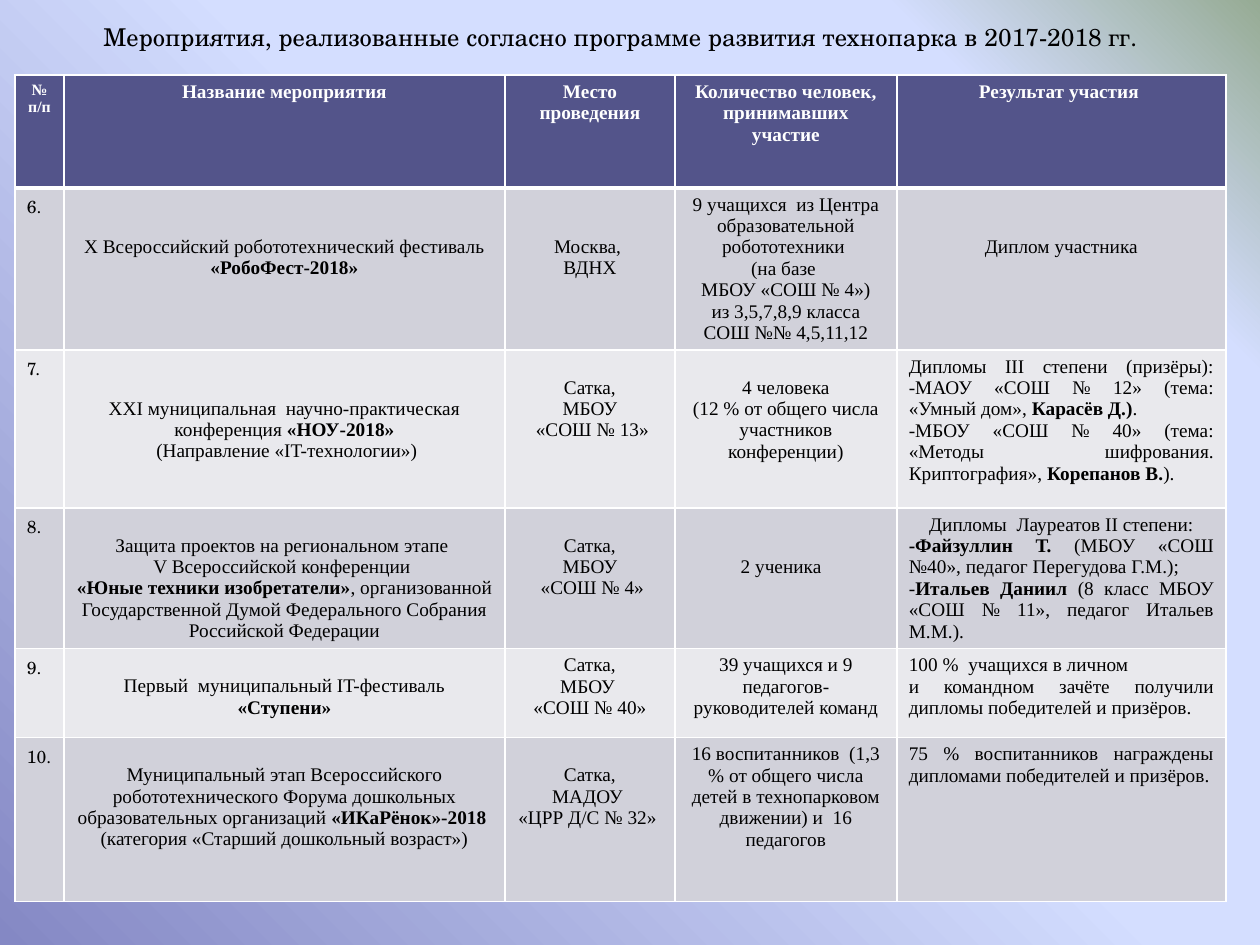
from dataclasses import dataclass

from pptx import Presentation
from pptx.dml.color import RGBColor
from pptx.enum.text import MSO_AUTO_SIZE, PP_ALIGN
from pptx.oxml import parse_xml
from pptx.oxml.ns import nsdecls
from pptx.util import Emu, Pt

CENTER, LEFT, JUSTIFY = PP_ALIGN.CENTER, PP_ALIGN.LEFT, PP_ALIGN.JUSTIFY
GROW = MSO_AUTO_SIZE.SHAPE_TO_FIT_TEXT
EMU_PER_PX = 914400 / 126
SERIF, SCHOOL = "Times New Roman", "TeX Gyre Schola"
BLACK, WHITE, HEADER_FILL = "000000", "FFFFFF", "53548A"
BAND_FILLS = ("D1D1DA", "E9E9ED")
LINE_HEIGHT, SIDE_MARGIN, TOP_MARGIN = 21, 12, 6
COLUMN_WIDTHS = (49, 441, 170, 222, 329)
ROW_HEIGHTS = (113, 125, 158, 113, 89, 164)
BACKGROUND_STOPS = ((0, "8488C4"), (53, "D4DEFF"), (83, "D4DEFF"), (100, "96AB94"))


@dataclass(frozen=True)
class Entry:
    text: str
    lines_down: int = 0
    aligns: tuple = (CENTER,)


@dataclass(frozen=True)
class Style:
    font: str
    size: int
    color: str = BLACK
    bold: bool = False


HEADINGS = ("№ п/п", "Название мероприятия", "Место проведения",
            "Количество человек, принимавших участие", "Результат участия ")

# fmt: off
EVENTS = (
    (Entry("X Всероссийский робототехнический фестиваль *«РобоФест-2018»*", 2),
     Entry("Москва, \nВДНХ", 2),
     Entry("9 учащихся  из Центра образовательной робототехники \n(на базе \n"
           "МБОУ «СОШ № 4»)\nиз 3,5,7,8,9 класса СОШ №№ 4,5,11,12"),
     Entry("Диплом участника", 2)),
    (Entry("XXI муниципальная  научно-практическая конференция *«НОУ-2018»*\n"
           " (Направление «IT-технологии»)", 2),
     Entry("Сатка,\nМБОУ\n «СОШ № 13»", 1),
     Entry("4 человека\n(12 % от общего числа участников конференции)", 1),
     Entry("Дипломы III степени (призёры): -МАОУ «СОШ № 12» (тема: «Умный дом», "
           "*Карасёв Д.)*.\n-МБОУ «СОШ № 40» (тема: «Методы шифрования. "
           "Криптография», *Корепанов В.*).", 0, (JUSTIFY,))),
    (Entry("Защита проектов на региональном этапе \nV Всероссийской конференции \n"
           "*«Юные техники изобретатели»*, организованной Государственной Думой "
           "Федерального Собрания Российской Федерации", 1),
     Entry("Сатка,\nМБОУ\n «СОШ № 4»", 1),
     Entry("2 ученика  ", 2),
     Entry("Дипломы  Лауреатов II степени:\n*-Файзуллин Т.* (МБОУ «СОШ №40», "
           "педагог Перегудова Г.М.);\n-*Итальев Даниил* (8 класс МБОУ "
           "«СОШ № 11», педагог Итальев М.М.).", 0, (CENTER, JUSTIFY))),
    (Entry("Первый  муниципальный IT-фестиваль *«Ступени»*", 1),
     Entry("Сатка,\nМБОУ \n«СОШ № 40»"),
     Entry("39 учащихся и 9 педагогов-руководителей команд"),
     Entry("100 %  учащихся в личном \nи командном зачёте получили дипломы "
           "победителей и призёров.", 0, (JUSTIFY,))),
    (Entry("Муниципальный этап Всероссийского робототехнического Форума дошкольных "
           "образовательных организаций *«ИКаРёнок»-2018  *"
           "(категория «Старший дошкольный возраст»)", 1),
     Entry("Сатка,\nМАДОУ \n«ЦРР Д/С № 32» ", 1),
     Entry("16 воспитанников  (1,3 % от общего числа детей в технопарковом "
           "движении) и  16 педагогов"),
     Entry("75 % воспитанников награждены дипломами победителей и призёров.",
           0, (JUSTIFY,))),
)
# fmt: on


def px(length: int) -> Emu:
    return Emu(round(length * EMU_PER_PX))


def rgb(color: str) -> RGBColor:
    return RGBColor.from_string(color)


def write(frame, entry: Entry, style: Style) -> None:
    for index, line in enumerate(entry.text.split("\n")):
        para = frame.add_paragraph() if index else frame.paragraphs[0]
        para.alignment = entry.aligns[min(index, len(entry.aligns) - 1)]
        for part, text in enumerate(line.split("*")):
            if not text:
                continue
            span = para.add_run()
            span.text = text
            span.font.name = style.font
            span.font.size = Pt(style.size)
            span.font.bold = style.bold or part % 2 == 1
            span.font.color.rgb = rgb(style.color)


def set_borders(cell, top: int, bottom: int) -> None:
    properties = cell._tc.get_or_add_tcPr()
    widths = (("lnL", 1), ("lnR", 1), ("lnT", top), ("lnB", bottom))
    for index, (side, points) in enumerate(widths):
        properties.insert(index, parse_xml(
            f'<a:{side} {nsdecls("a")} w="{Pt(points)}"><a:solidFill>'
            f'<a:srgbClr val="{WHITE}"/></a:solidFill></a:{side}>'))


def fill_cell(cell, entry: Entry, style: Style, fill: str, row: int) -> None:
    cell.margin_left = cell.margin_right = px(SIDE_MARGIN)
    cell.margin_top = px(TOP_MARGIN + entry.lines_down * LINE_HEIGHT)
    cell.margin_bottom = px(TOP_MARGIN)
    cell.fill.solid()
    cell.fill.fore_color.rgb = rgb(fill)
    set_borders(cell, 3 if row == 1 else 1, 3 if row == 0 else 1)
    write(cell.text_frame, entry, style)


def paint_background(page) -> None:
    stops = "".join(f'<a:gs pos="{percent * 1000}"><a:srgbClr val="{color}"/></a:gs>'
                    for percent, color in BACKGROUND_STOPS)
    page.element.cSld.insert(0, parse_xml(
        f'<p:bg {nsdecls("p", "a")}><p:bgPr><a:gradFill rotWithShape="1">'
        f'<a:gsLst>{stops}</a:gsLst><a:path path="circle">'
        '<a:fillToRect l="0" t="100000" r="100000" b="0"/></a:path></a:gradFill>'
        '<a:effectLst/></p:bgPr></p:bg>'))


def add_events_table(page) -> None:
    table = page.shapes.add_table(
        len(ROW_HEIGHTS), len(COLUMN_WIDTHS), px(15), px(75),
        px(sum(COLUMN_WIDTHS)), px(849)).table
    table.first_row = table.horz_banding = False
    for column, width in zip(table.columns, COLUMN_WIDTHS):
        column.width = px(width)
    for row, height in zip(table.rows, ROW_HEIGHTS):
        row.height = px(height)
    for column, heading in enumerate(HEADINGS):
        style = Style(SERIF, 11 if column else 9, WHITE, True)
        fill_cell(table.cell(0, column), Entry(heading), style, HEADER_FILL, 0)
    for row, event in enumerate(EVENTS, 1):
        fill = BAND_FILLS[(row - 1) % 2]
        number = Entry(f"{row + 5}.", 0, (LEFT,))
        fill_cell(table.cell(row, 0), number, Style(SCHOOL, 10), fill, row)
        for column, entry in enumerate(event, 1):
            fill_cell(table.cell(row, column), entry, Style(SERIF, 11), fill, row)


def add_title(page) -> None:
    box = page.shapes.add_textbox(px(15), px(16), px(1211), px(43))
    box.text_frame.word_wrap = True
    box.text_frame.auto_size = GROW
    title = Entry("Мероприятия, реализованные согласно программе развития "
                  "технопарка в 2017-2018 гг.")
    write(box.text_frame, title, Style(SCHOOL, 14))


def main() -> None:
    deck = Presentation()
    deck.slide_width, deck.slide_height = px(1260), px(945)
    page = deck.slides.add_slide(deck.slide_layouts[6])
    paint_background(page)
    add_events_table(page)
    add_title(page)
    deck.save("out.pptx")


if __name__ == "__main__":
    main()
